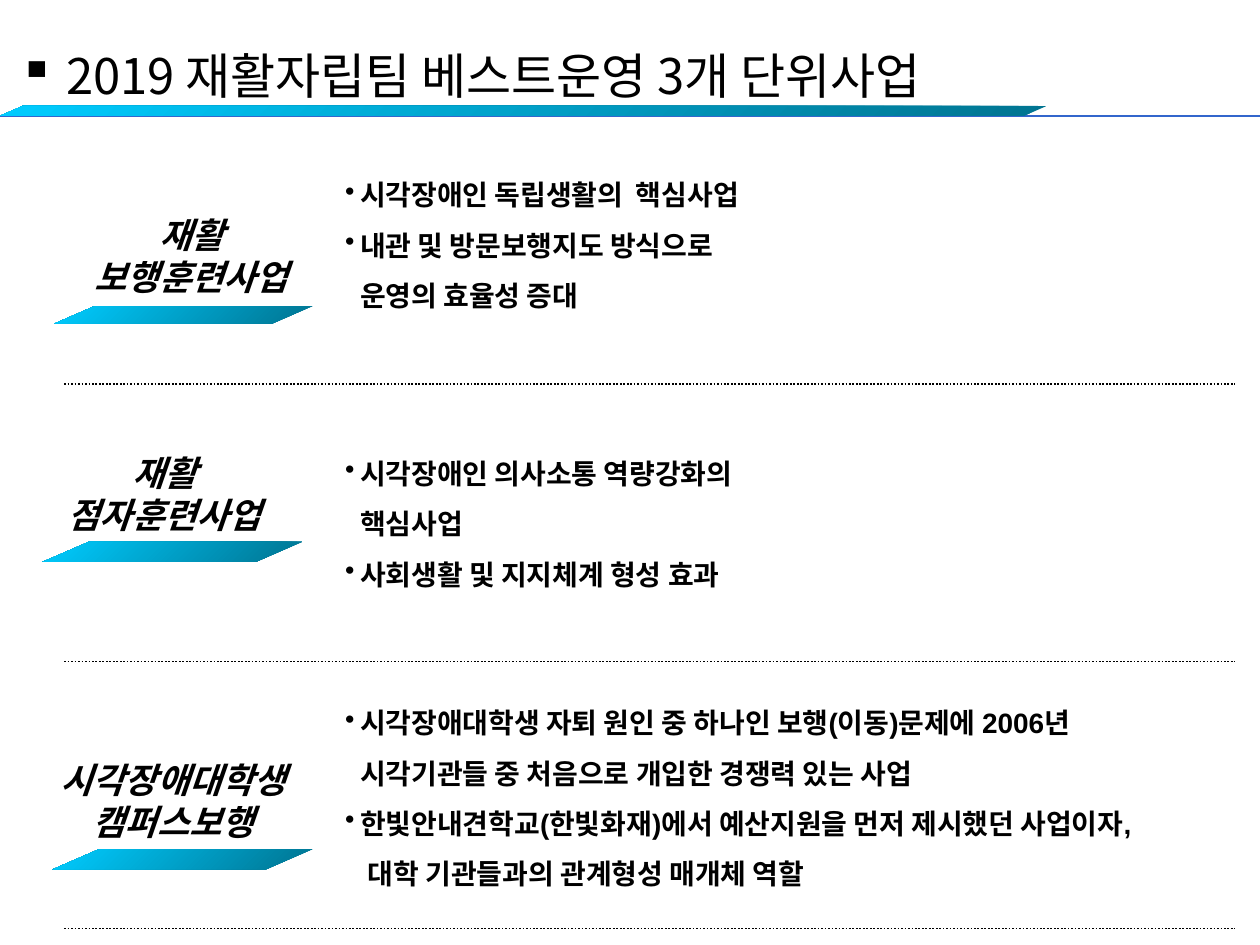
from dataclasses import dataclass

import pptx
import pptx.dml.color
import pptx.enum.dml
import pptx.enum.shapes
import pptx.enum.text
import pptx.oxml
import pptx.oxml.ns
import pptx.util
from pptx.util import Inches

COLORS = {"text": "000000", "rule": "3366CC", "bar": "00CCFF"}
LATIN_FONT, KOREAN_FONT = "Arial", "Noto Sans CJK KR"
BAR_SHADE = "27451"
HANGING = 0.12
BODY_LEFT = 2.64


@dataclass
class Box:
    left: float
    top: float
    width: float
    height: float

    def emu(self) -> list:
        return [Inches(v) for v in (self.left, self.top, self.width, self.height)]


@dataclass
class Point:
    text: str
    bullet: str = "•"


@dataclass
class Program:
    name: list[str]
    name_box: Box
    bar_box: Box
    points: list[Point]
    points_box: Box
    divider_top: float


PROGRAMS = [
    Program(
        ["재활", "보행훈련사업"], Box(0.2, 1.47, 2.64, 1.11), Box(0.43, 2.43, 2.05, 0.14),
        [Point("시각장애인 독립생활의  핵심사업"),
         Point("내관 및 방문보행지도 방식으로"),
         Point("운영의 효율성 증대", bullet="")],
        Box(BODY_LEFT, 1.23, 3.7, 1.26), 3.05),
    Program(
        ["재활", "점자훈련사업"], Box(0.28, 3.36, 2.05, 1.11), Box(0.34, 4.3, 2.06, 0.16),
        [Point("시각장애인 의사소통 역량강화의 핵심사업"),
         Point("사회생활 및 지지체계 형성 효과")],
        Box(BODY_LEFT, 3.44, 3.7, 1.26), 5.25),
    Program(
        ["시각장애대학생", "캠퍼스보행"], Box(0.35, 5.8, 2.05, 1.11), Box(0.42, 6.74, 2.06, 0.16),
        [Point("시각장애대학생 자퇴 원인 중 하나인 보행(이동)문제에 2006년 "
               "시각기관들 중 처음으로 개입한 경쟁력 있는 사업"),
         Point("한빛안내견학교(한빛화재)에서 예산지원을 먼저 제시했던 "
               "사업이자, 대학 기관들과의 관계형성 매개체 역할")],
        Box(BODY_LEFT, 5.42, 6.38, 1.72), 7.37),
]


def rgb(name: str) -> pptx.dml.color.RGBColor:
    return pptx.dml.color.RGBColor.from_string(COLORS[name])


def add_xml(parent, tag: str, **attributes: str) -> None:
    element = pptx.oxml.parse_xml(f"<{tag} {pptx.oxml.ns.nsdecls('a')}/>")
    for key, value in attributes.items():
        element.set(key, value)
    parent.append(element)


def add_rule(shapes, left: float, right: float, top: float, color: str, width: float, dotted: bool) -> None:
    line = shapes.add_connector(
        pptx.enum.shapes.MSO_CONNECTOR.STRAIGHT,
        Inches(left), Inches(top), Inches(right), Inches(top))
    line.line.color.rgb = rgb(color)
    line.line.width = pptx.util.Pt(width)
    if dotted:
        line.line.dash_style = pptx.enum.dml.MSO_LINE.ROUND_DOT
    add_xml(line._element.spPr, "a:effectLst")


def add_bar(shapes, box: Box) -> None:
    """Add a slanted bar that runs from bright at the left to dark at the right."""
    sp = shapes.add_shape(pptx.enum.shapes.MSO_SHAPE.PARALLELOGRAM, *box.emu())
    sp.shadow.inherit = False
    sp.adjustments[0] = 2.3
    sp.line.fill.background()
    sp.fill.gradient()
    sp.fill.gradient_angle = 315
    for stop in sp.fill.gradient_stops:
        stop.color.rgb = rgb("bar")
    dark = sp._element.spPr.xpath(".//a:gs[1]/a:srgbClr")[0]
    add_xml(dark, "a:shade", val=BAR_SHADE)
    xfrm = sp._element.spPr.xfrm
    xfrm.set("flipH", "1")
    xfrm.set("flipV", "1")


def add_text(shapes, box: Box, lines: list[str], size: float, font: str = LATIN_FONT,
             bold: bool = True, italic: bool = False, wrap: bool = False):
    tf = shapes.add_textbox(*box.emu()).text_frame
    tf.word_wrap = wrap
    tf.text = "\n".join(lines)
    for p in tf.paragraphs:
        for r in p.runs:
            r.font.size = pptx.util.Pt(size)
            r.font.bold = bold
            r.font.italic = italic
            r.font.name = font
            r.font.color.rgb = rgb("text")
            add_xml(r._r.rPr, "a:ea", typeface=KOREAN_FONT)
    return tf


def add_title(shapes) -> None:
    tf = add_text(shapes, Box(0.05, 0.31, 8.4, 0.57),
                  [" 2019 재활자립팀 베스트운영 3개 단위사업"], 28, KOREAN_FONT, bold=False)
    tf.auto_size = pptx.enum.text.MSO_AUTO_SIZE.SHAPE_TO_FIT_TEXT
    add_xml(tf.paragraphs[0]._p.get_or_add_pPr(), "a:buChar", char="▪")


def add_name(shapes, program: Program) -> None:
    group = shapes.add_group_shape()
    tf = add_text(group.shapes, program.name_box, program.name, 20, italic=True)
    tf.vertical_anchor = pptx.enum.text.MSO_ANCHOR.MIDDLE
    for p in tf.paragraphs:
        p.alignment = pptx.enum.text.PP_ALIGN.CENTER
    add_bar(group.shapes, program.bar_box)


def add_points(shapes, program: Program) -> None:
    tf = add_text(shapes, program.points_box, [point.text for point in program.points], 16, wrap=True)
    tf.auto_size = pptx.enum.text.MSO_AUTO_SIZE.SHAPE_TO_FIT_TEXT
    for p, point in zip(tf.paragraphs, program.points):
        p.line_spacing = 1.5
        pPr = p._p.get_or_add_pPr()
        pPr.set("marL", str(Inches(HANGING)))
        if point.bullet:
            pPr.set("indent", str(-Inches(HANGING)))
            add_xml(pPr, "a:buChar", char=point.bullet)


def main() -> None:
    prs = pptx.Presentation()
    prs.slide_width, prs.slide_height = Inches(10), Inches(7.5)
    shapes = prs.slides.add_slide(prs.slide_layouts[6]).shapes

    add_rule(shapes, 0, 10, 0.92, "rule", 0.75, dotted=False)
    add_title(shapes)
    add_bar(shapes, Box(0, 0.84, 8.31, 0.08))
    for program in PROGRAMS:
        add_name(shapes, program)
        add_points(shapes, program)
        add_rule(shapes, 0.51, 9.8, program.divider_top, "text", 1, dotted=True)

    prs.save("out.pptx")


if __name__ == "__main__":
    main()
